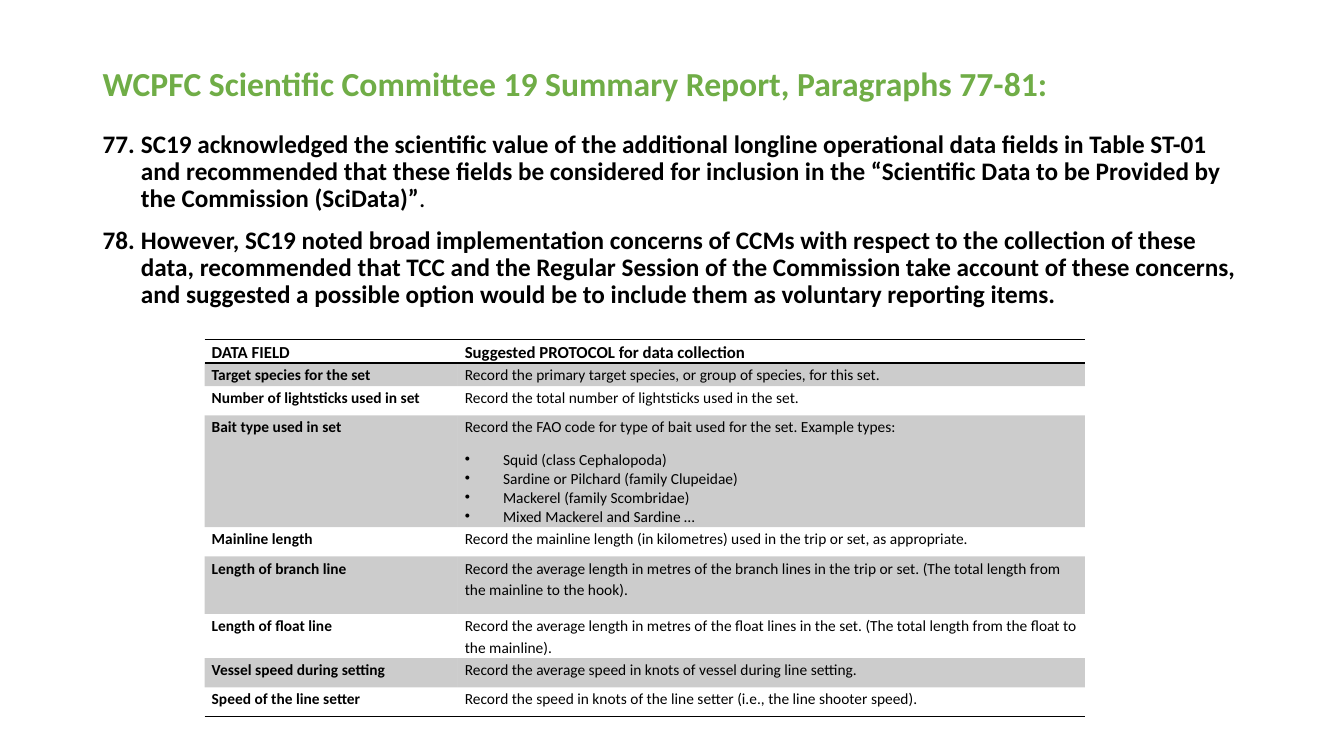
from lxml.etree import SubElement
from pptx import Presentation
from pptx.dml.color import RGBColor
from pptx.enum.text import PP_ALIGN as Align
from pptx.oxml import parse_xml
from pptx.oxml.ns import nsdecls, qn
from pptx.util import Inches, Pt

FONT = "Calibri"
COLORS = {"title": "70AD47", "text": "000000", "band": "000000", "rule": "000000"}
NO_STYLE = "{2D5ABB26-0587-4C30-8999-92F81FD0307C}"
TITLE = "WCPFC Scientific Committee 19 Summary Report, Paragraphs 77-81:"
FIRST_NUMBER = 77
ITEMS = [
    [("SC19 acknowledged the scientific value of the additional longline operational data fields "
      "in Table ST-01 and recommended that these fields be considered for inclusion in the "
      "“Scientific Data to be Provided by the Commission (SciData)”", True), (".", False)],
    [("However, SC19 noted broad implementation concerns of CCMs with respect to the collection "
      "of these data, recommended that TCC and the Regular Session of the Commission take account "
      "of these concerns, and suggested a possible option would be to include them as voluntary "
      "reporting items.", True)],
]
COLUMNS = [2.51, 6.22]
ROWS = [
    (0.23, "DATA FIELD", "Suggested PROTOCOL for data collection"),
    (0.23, "Target species for the set",
     "Record the primary target species, or group of species, for this set."),
    (0.29, "Number of lightsticks used in set",
     "Record the total number of lightsticks used in the set."),
    (1.11, "Bait type used in set",
     "Record the FAO code for type of bait used for the set. Example types:"),
    (0.29, "Mainline length",
     "Record the mainline length (in kilometres) used in the trip or set, as appropriate."),
    (0.57, "Length of branch line",
     "Record the average length in metres of the branch lines in the trip or set. "
     "(The total length from the mainline to the hook)."),
    (0.44, "Length of float line",
     "Record the average length in metres of the float lines in the set. "
     "(The total length from the float to the mainline)."),
    (0.29, "Vessel speed during setting",
     "Record the average speed in knots of vessel during line setting."),
    (0.29, "Speed of the line setter",
     "Record the speed in knots of the line setter (i.e., the line shooter speed)."),
]
BAIT_ROW = 3
BAITS = ["Squid (class Cephalopoda)", "Sardine or Pilchard (family Clupeidae)",
         "Mackerel (family Scombridae)", "Mixed Mackerel and Sardine …"]
TITLE_FORMAT = {"line_spacing": 1.15, "space_before": Pt(10), "space_after": Pt(10)}
ITEM_FORMAT = {"line_spacing": 0.9, "space_before": Pt(10)}
CELL_FORMAT = {"line_spacing": 1.15, "space_after": Pt(10)}
BAIT_FORMAT = {"alignment": Align.JUSTIFY}


def write_paragraph(p, runs, size, color="text", **formats):
    """Fill a paragraph with (text, bold) runs."""
    for name, value in formats.items():
        setattr(p, name, value)
    for text, bold in runs:
        r = p.add_run()
        r.text = text
        for name, value in {"name": FONT, "size": Pt(size), "bold": bold}.items():
            setattr(r.font, name, value)
        r.font.color.rgb = RGBColor.from_string(COLORS[color])


def add_marker(p, tag, **attributes):
    """Give a paragraph a hanging bullet or number."""
    pPr = p._p.get_or_add_pPr()
    pPr.set("marL", str(Inches(0.38)))
    pPr.set("indent", str(Inches(-0.38)))
    SubElement(pPr, qn(tag), attributes)


def add_body(s):
    """Add the heading and the numbered paragraphs."""
    sp = s.shapes.add_textbox(Inches(0.92), Inches(0.52), Inches(11.5), Inches(6.24))
    tf = sp.text_frame
    tf.word_wrap = True
    write_paragraph(tf.paragraphs[0], [(TITLE, True)], 24, "title", **TITLE_FORMAT)
    for runs in ITEMS:
        p = tf.add_paragraph()
        write_paragraph(p, runs, 18, **ITEM_FORMAT)
        add_marker(p, "a:buAutoNum", type="arabicPeriod", startAt=str(FIRST_NUMBER))


def shade(cell):
    """Fill a cell with the translucent band colour."""
    cell.fill.solid()
    cell.fill.fore_color.rgb = RGBColor.from_string(COLORS["band"])
    color = cell._tc.tcPr.find(qn("a:solidFill"))[0]
    SubElement(color, qn("a:alpha"), val="20000")


def add_rules(cell, sides):
    """Draw thin rules on the given sides of a cell, in schema order."""
    for index, side in enumerate(sides):
        rule = parse_xml(
            f'<a:ln{side} {nsdecls("a")} w="{Pt(1)}"><a:solidFill>'
            f'<a:srgbClr val="{COLORS["rule"]}"/></a:solidFill></a:ln{side}>')
        cell._tc.get_or_add_tcPr().insert(index, rule)


def write_cell(cell, text, size, bold):
    """Set a cell's margins and its first paragraph."""
    margins = {"margin_left": 0.07, "margin_right": 0.07, "margin_top": 0, "margin_bottom": 0}
    for name, value in margins.items():
        setattr(cell, name, Inches(value))
    write_paragraph(cell.text_frame.paragraphs[0], [(text, bold)], size, **CELL_FORMAT)


def add_fields_table(s):
    """Add the table of data fields and protocols."""
    height = sum(row[0] for row in ROWS)
    frame = s.shapes.add_table(len(ROWS), len(COLUMNS), Inches(2.03), Inches(3.37),
                               Inches(sum(COLUMNS)), Inches(height))
    table = frame.table
    table.first_row = table.horz_banding = False
    table._tbl.tblPr.find(qn("a:tableStyleId")).text = NO_STYLE
    for column, width in zip(table.columns, COLUMNS):
        column.width = Inches(width)
    rules = {0: "TB", len(ROWS) - 1: "B"}
    for i, (row_height, *texts) in enumerate(ROWS):
        table.rows[i].height = Inches(row_height)
        for j, text in enumerate(texts):
            cell = table.cell(i, j)
            write_cell(cell, text, 11 if i else 12, i == 0 or j == 0)
            if i % 2:
                shade(cell)
            else:
                cell.fill.background()
            add_rules(cell, rules.get(i, ""))
    for bait in BAITS:
        p = table.cell(BAIT_ROW, 1).text_frame.add_paragraph()
        write_paragraph(p, [(bait, False)], 11, **BAIT_FORMAT)
        add_marker(p, "a:buChar", char="•")


def main():
    """Build the slide and save it."""
    prs = Presentation()
    prs.slide_width, prs.slide_height = Inches(13.33), Inches(7.5)
    s = prs.slides.add_slide(prs.slide_layouts[6])
    add_body(s)
    add_fields_table(s)
    prs.save("out.pptx")


if __name__ == "__main__":
    main()
